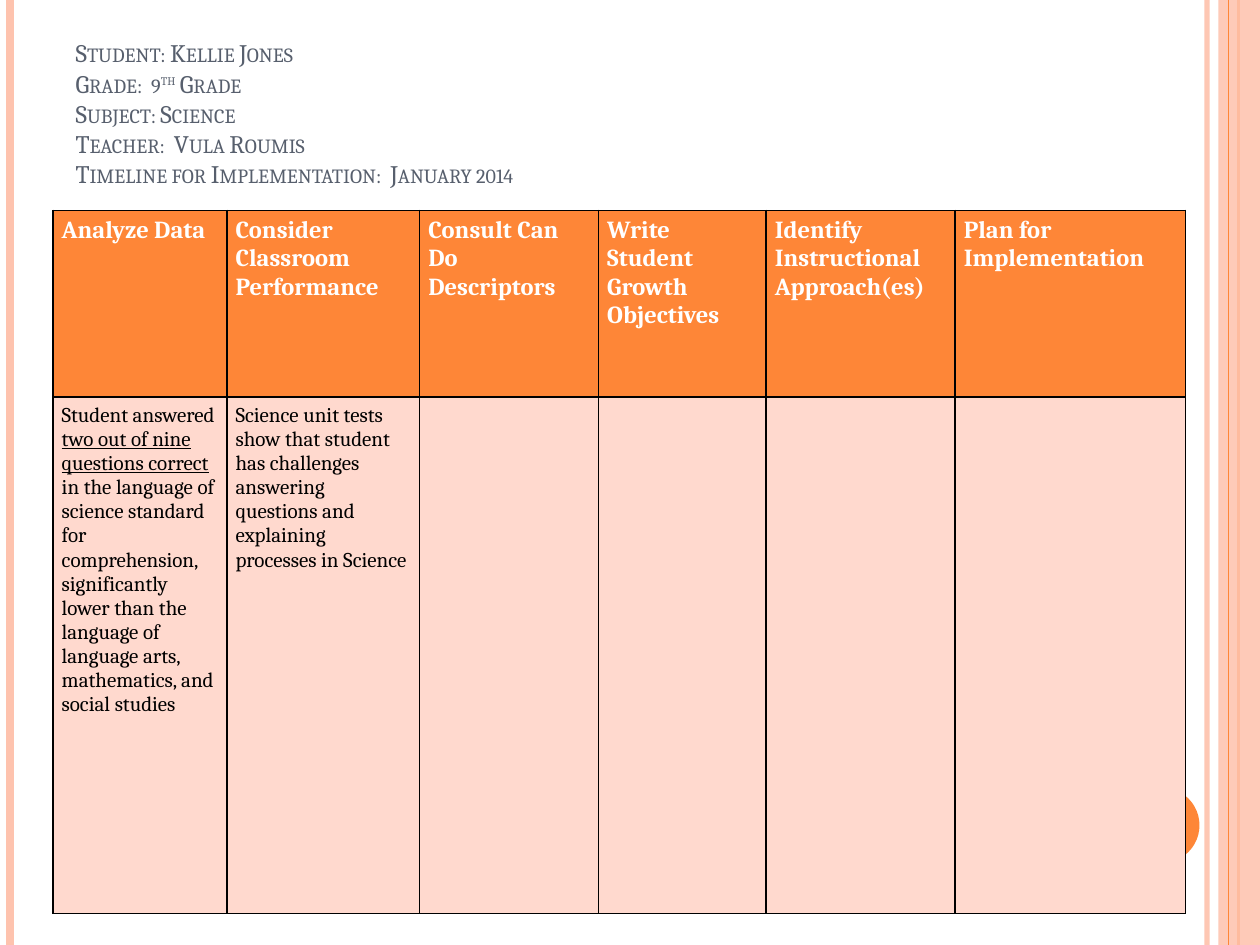
from lxml import etree
from pptx import Presentation
from pptx.dml.color import RGBColor
from pptx.enum.shapes import MSO_CONNECTOR, MSO_SHAPE
from pptx.enum.text import MSO_ANCHOR, MSO_AUTO_SIZE, PP_ALIGN
from pptx.oxml.ns import qn
from pptx.util import Inches, Pt

STRAIGHT = MSO_CONNECTOR.STRAIGHT
RECTANGLE, OVAL = MSO_SHAPE.RECTANGLE, MSO_SHAPE.OVAL
BOTTOM, TOP = MSO_ANCHOR.BOTTOM, MSO_ANCHOR.TOP
LEFT = PP_ALIGN.LEFT
NO_AUTOFIT = MSO_AUTO_SIZE.NONE

ORANGE = RGBColor(0xFE, 0x86, 0x37)
PEACH = RGBColor(0xFE, 0xC3, 0xAE)
PALE_PEACH = RGBColor(0xFF, 0xD9, 0xCE)
SLATE = RGBColor(0x57, 0x5F, 0x6D)
WHITE = RGBColor(0xFF, 0xFF, 0xFF)
BLACK = RGBColor(0, 0, 0)
FONT = "Cambria"

STUDENT_DETAILS = [
    [("Student: Kellie Jones", False)],
    [("Grade:  9", False), ("th", True), (" Grade", False)],
    [("Subject: Science", False)],
    [("Teacher:  Vula Roumis", False)],
    [("Timeline for Implementation:  January 2014", False)],
]
STEPS = [
    ("Analyze Data", 1.38, [
        ("Student answered ", False),
        ("two out of nine questions correct ", True),
        ("in the language of science standard for comprehension, significantly "
         "lower than the language of language arts, mathematics, and social "
         "studies", False),
    ]),
    ("Consider Classroom Performance", 1.53, [
        ("Science unit tests show that student has challenges answering "
         "questions and explaining processes in Science", False),
    ]),
    ("Consult Can Do Descriptors", 1.42, []),
    ("Write Student Growth Objectives", 1.33, []),
    ("Identify Instructional Approach(es)", 1.5, []),
    ("Plan for Implementation", 1.83, []),
]


def set_opacity(fill, percent):
    color = fill._xPr.find(qn("a:solidFill"))[0]
    etree.SubElement(color, qn("a:alpha"), val=str(percent * 1000))


def add_stripe(slide, x, top, height, color, width, opacity=100):
    stripe = slide.shapes.add_connector(
        STRAIGHT, Inches(x), Inches(top), Inches(x), Inches(top + height))
    stripe.line.color.rgb = color
    stripe.line.width = Pt(width)
    etree.SubElement(stripe._element.spPr, qn("a:effectLst"))
    if opacity < 100:
        set_opacity(stripe.line.fill, opacity)


def add_block(slide, kind, left, top, width, height, color):
    block = slide.shapes.add_shape(
        kind, Inches(left), Inches(top), Inches(width), Inches(height))
    block.shadow.inherit = False
    block.fill.solid()
    block.fill.fore_color.rgb = color
    block.line.fill.background()
    return block


def add_frame(slide, left, top, width, height):
    right = left + width
    add_stripe(slide, right - 0.42, top, height, PEACH, 3, 93)
    add_stripe(slide, left + 0.08, top, height, PEACH, 4.5)
    add_stripe(slide, right - 0.17, top, height, ORANGE, 1.5)
    band = add_block(slide, RECTANGLE, right - 0.33, top, 0.33, height, PEACH)
    set_opacity(band.fill, 87)
    add_stripe(slide, right - 0.25, top, height, ORANGE, 0.75)
    add_block(slide, OVAL, right - 1.08, top + height - 1.25, 0.6, 0.6, ORANGE)


def add_text(paragraph, text, size, color):
    run = paragraph.add_run()
    run.text = text
    run.font.name = FONT
    run.font.size = Pt(size)
    run.font.color.rgb = color
    return run


def fill_title(slide, left, top, width, height):
    title = slide.shapes.title
    title.left, title.top = Inches(left), Inches(top)
    title.width, title.height = Inches(width), Inches(height)
    frame = title.text_frame
    frame.word_wrap = True
    frame.auto_size = NO_AUTOFIT
    frame.vertical_anchor = BOTTOM
    paragraph = frame.paragraphs[0]
    paragraph.alignment = LEFT
    for index, detail in enumerate(STUDENT_DETAILS):
        if index:
            paragraph.add_line_break()
        for text, raised in detail:
            properties = add_text(paragraph, text, 14.4, SLATE).font._element
            properties.set("cap", "small")
            if raised:
                properties.set("baseline", "30000")


def set_borders(cell):
    properties = cell._tc.get_or_add_tcPr()
    for index, side in enumerate(("lnL", "lnR", "lnT", "lnB")):
        border = etree.Element(qn(f"a:{side}"), w=str(Pt(1)))
        solid = etree.SubElement(border, qn("a:solidFill"))
        etree.SubElement(solid, qn("a:srgbClr"), val=str(BLACK))
        properties.insert(index, border)


def format_cell(cell, color):
    cell.fill.solid()
    cell.fill.fore_color.rgb = color
    cell.margin_left = cell.margin_right = Inches(0.07)
    cell.margin_top = cell.margin_bottom = Inches(0.05)
    cell.vertical_anchor = TOP
    set_borders(cell)


def add_plan_table(slide, left, top, width, height):
    table = slide.shapes.add_table(
        2, len(STEPS), Inches(left), Inches(top),
        Inches(width), Inches(height)).table
    header_height = 1.48
    table.rows[0].height = Inches(header_height)
    table.rows[1].height = Inches(height - header_height)
    for column, (heading, column_width, notes) in enumerate(STEPS):
        table.columns[column].width = Inches(column_width)
        header, body = table.cell(0, column), table.cell(1, column)
        format_cell(header, ORANGE)
        format_cell(body, PALE_PEACH)
        add_text(header.text_frame.paragraphs[0], heading, 14, WHITE).font.bold = True
        for text, underlined in notes:
            run = add_text(body.text_frame.paragraphs[0], text, 12, BLACK)
            run.font.bold = False
            run.font.underline = underlined


def main():
    presentation = Presentation()
    presentation.slide_width = Inches(10)
    presentation.slide_height = Inches(7.5)
    slide = presentation.slides.add_slide(presentation.slide_layouts[5])
    slide.background.fill.solid()
    slide.background.fill.fore_color.rgb = WHITE
    add_frame(slide, 0, 0, 10, 7.5)
    fill_title(slide, 0.5, 0.3, 8.17, 1.25)
    add_plan_table(slide, 0.42, 1.67, 9, 5.58)
    presentation.save("out.pptx")


if __name__ == "__main__":
    main()
